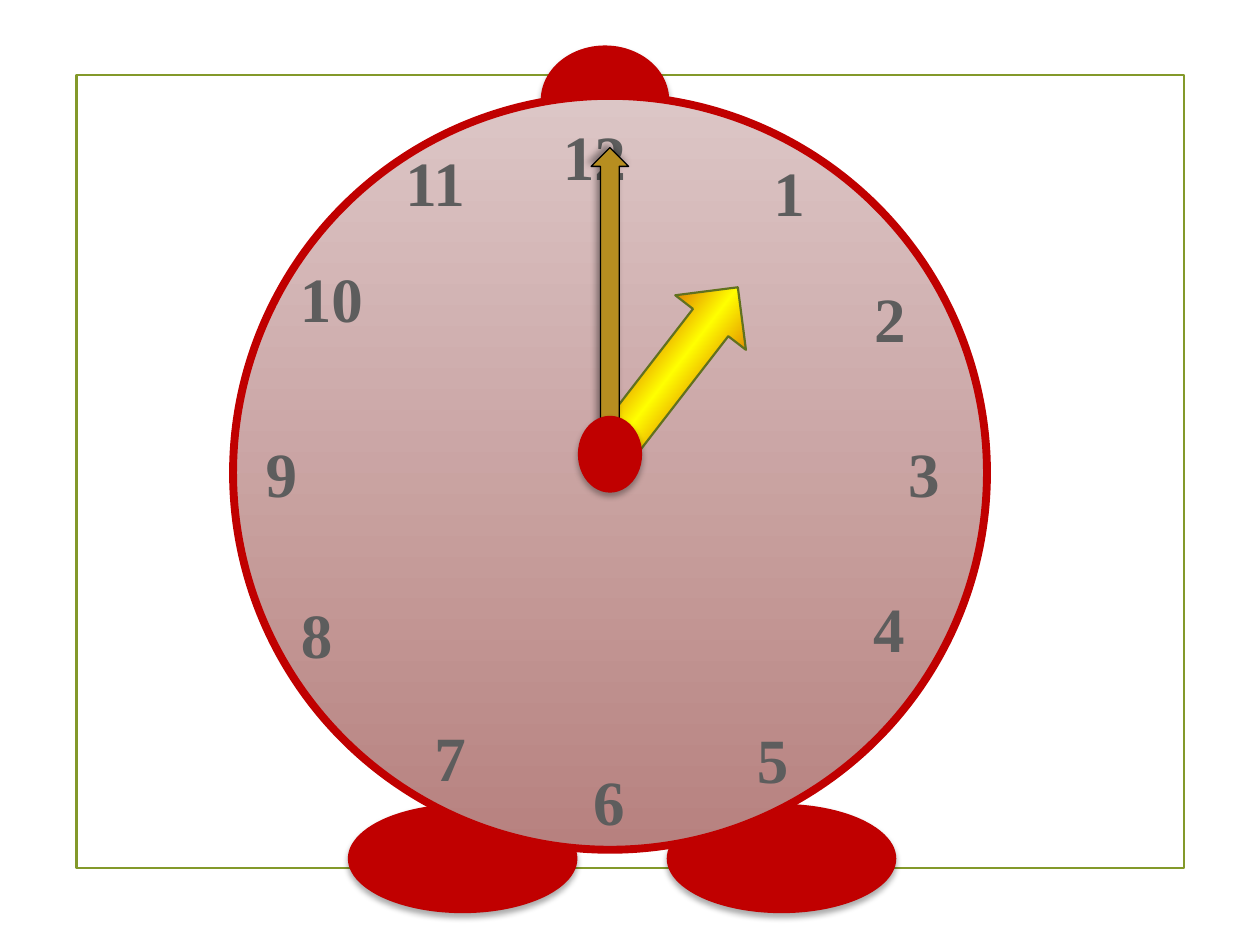
from pptx import Presentation
from pptx.dml.color import RGBColor
from pptx.enum.shapes import MSO_SHAPE as SHAPE
from pptx.oxml import parse_xml
from pptx.oxml.ns import nsdecls
from pptx.util import Pt

THEME = {
    "frame": "83992A", "red": "C00000", "yellow": "FFFF00",
    "face_top": "DCC6C6", "face_bottom": "B7817F",
    "minute": "B78E20", "hour_line": "61711F", "black": "000000",
    "digit": "5D5D5D", "digit_font": "Times New Roman", "digit_size": 36,
}
SOFT = (32, 3.5, 2.2, 90)
DEEP = (40, 4, 3, 225)


def gradient_xml(stops, angle):
    marks = "".join(
        f'<a:gs pos="{pos * 1000}"><a:srgbClr val="{THEME[color]}"/></a:gs>'
        for pos, color in stops)
    return parse_xml(
        f'<a:gradFill {nsdecls("a")} rotWithShape="1"><a:gsLst>{marks}</a:gsLst>'
        f'<a:lin ang="{angle * 60000}" scaled="0"/></a:gradFill>')


def add_part(kind, box, fill=None, line=None, width=0, shadow=None):
    sp = s.shapes.add_shape(kind, *[Pt(v) for v in box])
    if isinstance(fill, str):
        sp.fill.solid()
        sp.fill.fore_color.rgb = RGBColor.from_string(THEME[fill])
    elif fill is None:
        sp.fill.background()
    else:
        sp._element.spPr.append(gradient_xml(*fill))
    if line:
        sp.line.color.rgb = RGBColor.from_string(THEME[line])
        sp.line.width = Pt(width)
    else:
        sp.line.fill.background()
    sp.shadow.inherit = False
    if shadow:
        alpha, blur, dist, angle = shadow
        effects = sp._element.spPr.find("{*}effectLst")
        effects.append(parse_xml(
            f'<a:outerShdw {nsdecls("a")} blurRad="{Pt(blur)}" dist="{Pt(dist)}" '
            f'dir="{angle * 60000}" algn="ctr" rotWithShape="0">'
            f'<a:srgbClr val="{THEME["black"]}"><a:alpha val="{alpha * 1000}"/>'
            f'</a:srgbClr></a:outerShdw>'))
    return sp


prs = Presentation()
prs.slide_width, prs.slide_height = Pt(720), Pt(540)
s = prs.slides.add_slide(prs.slide_layouts[6])

add_part(SHAPE.RECTANGLE, (43.7, 42.8, 633, 453.4), line="frame", width=1.25)

for left in (381, 198.8):
    add_part(SHAPE.OVAL, (left, 459.4, 131.2, 62.4), "red", shadow=SOFT)
add_part(SHAPE.OVAL, (309, 26, 73.4, 62.4), "red", shadow=SOFT)

face = ([(0, "face_top"), (100, "face_bottom")], 90)
add_part(SHAPE.OVAL, (133.2, 54.8, 430.8, 430.8), face, "red", 4.5)

glow = ([(16, "red"), (50, "yellow"), (87, "red")], 0)
hour_hand = add_part(SHAPE.UP_ARROW, (362.2, 152.6, 51, 111), glow, "hour_line", 1.25)
hour_hand.rotation = 37.7

digits = {
    "12": (314.6, 63.4), "6": (331.9, 432), "9": (144.7, 244.8),
    "3": (511.9, 244.8), "1": (434.9, 84.2), "2": (492.5, 156.2),
    "4": (491.8, 333.4), "5": (425.5, 408.2), "7": (241.2, 406.8),
    "8": (164.9, 337), "10": (164.2, 144.7), "11": (224.6, 78.5),
}
for digit, (left, top) in digits.items():
    width = 66.2 if len(digit) == 2 else 40.3
    tb = s.shapes.add_textbox(Pt(left), Pt(top), Pt(width), Pt(51))
    tf = tb.text_frame
    tf.word_wrap = True
    r = tf.paragraphs[0].add_run()
    r.text = digit
    r.font.name = THEME["digit_font"]
    r.font.size = Pt(THEME["digit_size"])
    r.font.bold = True
    r.font.color.rgb = RGBColor.from_string(THEME["digit"])

add_part(SHAPE.UP_ARROW, (337.8, 84.4, 21.4, 181.4), "minute", "black", 0.75, DEEP)
add_part(SHAPE.OVAL, (330.2, 237.6, 36.7, 43.9), "red", shadow=SOFT)

prs.save("out.pptx")
